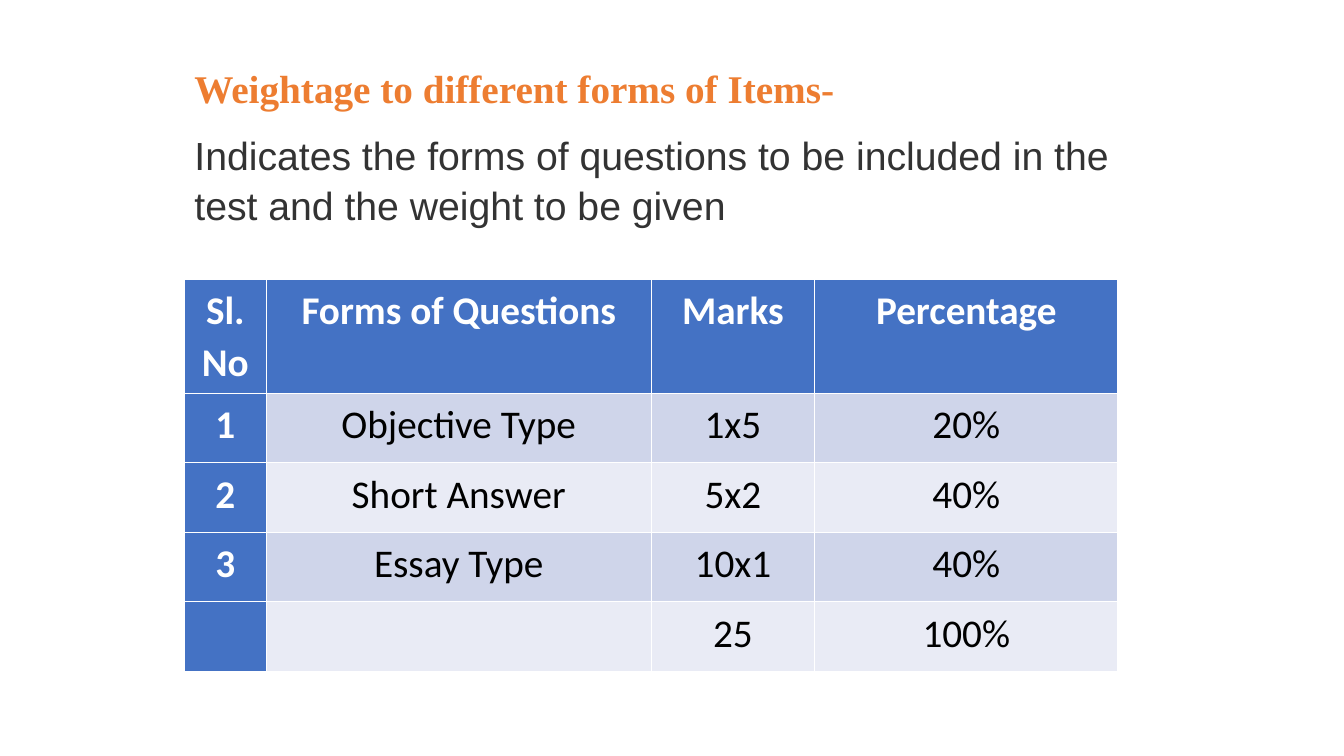
import pptx
import pptx.util
import pptx.dml.color
import pptx.enum.text

Inches = pptx.util.Inches
Pt = pptx.util.Pt
RGBColor = pptx.dml.color.RGBColor

ORANGE = RGBColor(0xED, 0x7D, 0x31)
GREY = RGBColor(0x33, 0x33, 0x33)
BLUE = RGBColor(0x44, 0x72, 0xC4)
BAND_DARK = RGBColor(0xCF, 0xD5, 0xEA)
BAND_LIGHT = RGBColor(0xE9, 0xEB, 0xF5)
WHITE = RGBColor(0xFF, 0xFF, 0xFF)
BLACK = RGBColor(0x00, 0x00, 0x00)


def write(para, text, font, color, bold, space_after):
    para.line_spacing = 1.07
    para.space_after = Pt(space_after)
    span = para.add_run()
    span.text = text
    span.font.name = font
    span.font.size = Pt(28)
    span.font.bold = bold
    span.font.color.rgb = color


deck = pptx.Presentation()
deck.slide_width = Inches(13.33)
deck.slide_height = Inches(7.5)
page = deck.slides.add_slide(deck.slide_layouts[6])

# Heading and explanation
box = page.shapes.add_textbox(Inches(1.83), Inches(0.56), Inches(9.27), Inches(1.75))
frame = box.text_frame
frame.word_wrap = True
frame.vertical_anchor = pptx.enum.text.MSO_ANCHOR.MIDDLE
write(frame.paragraphs[0], "Weightage to different forms of Items-",
      "Times New Roman", ORANGE, True, 12)
write(frame.add_paragraph(),
      "Indicates the forms of questions to be included in the test and the weight to be given",
      "Arial", GREY, False, 12)

# Weightage table: the default style supplies the white cell borders
rows = [
    ("Sl. No", "Forms of Questions", "Marks", "Percentage"),
    ("1", "Objective Type", "1x5", "20%"),
    ("2", "Short Answer", "5x2", "40%"),
    ("3", "Essay Type", "10x1", "40%"),
    ("", "", "25", "100%"),
]
table = page.shapes.add_table(len(rows), len(rows[0]), Inches(1.83), Inches(2.77),
                              Inches(9.26), Inches(3.89)).table
table.first_col = True
for column, width in zip(table.columns, (0.81, 3.82, 1.62, 3.01)):
    column.width = Inches(width)

for r, values in enumerate(rows):
    table.rows[r].height = Inches(0.69 if r else 1.13)
    for c, value in enumerate(values):
        heading = r == 0 or c == 0
        cell = table.cell(r, c)
        cell.fill.solid()
        cell.fill.fore_color.rgb = BLUE if heading else BAND_DARK if r % 2 else BAND_LIGHT
        if value:
            para = cell.text_frame.paragraphs[0]
            para.alignment = pptx.enum.text.PP_ALIGN.CENTER
            write(para, value, "Calibri", WHITE if heading else BLACK, heading, 8)

deck.save("out.pptx")
